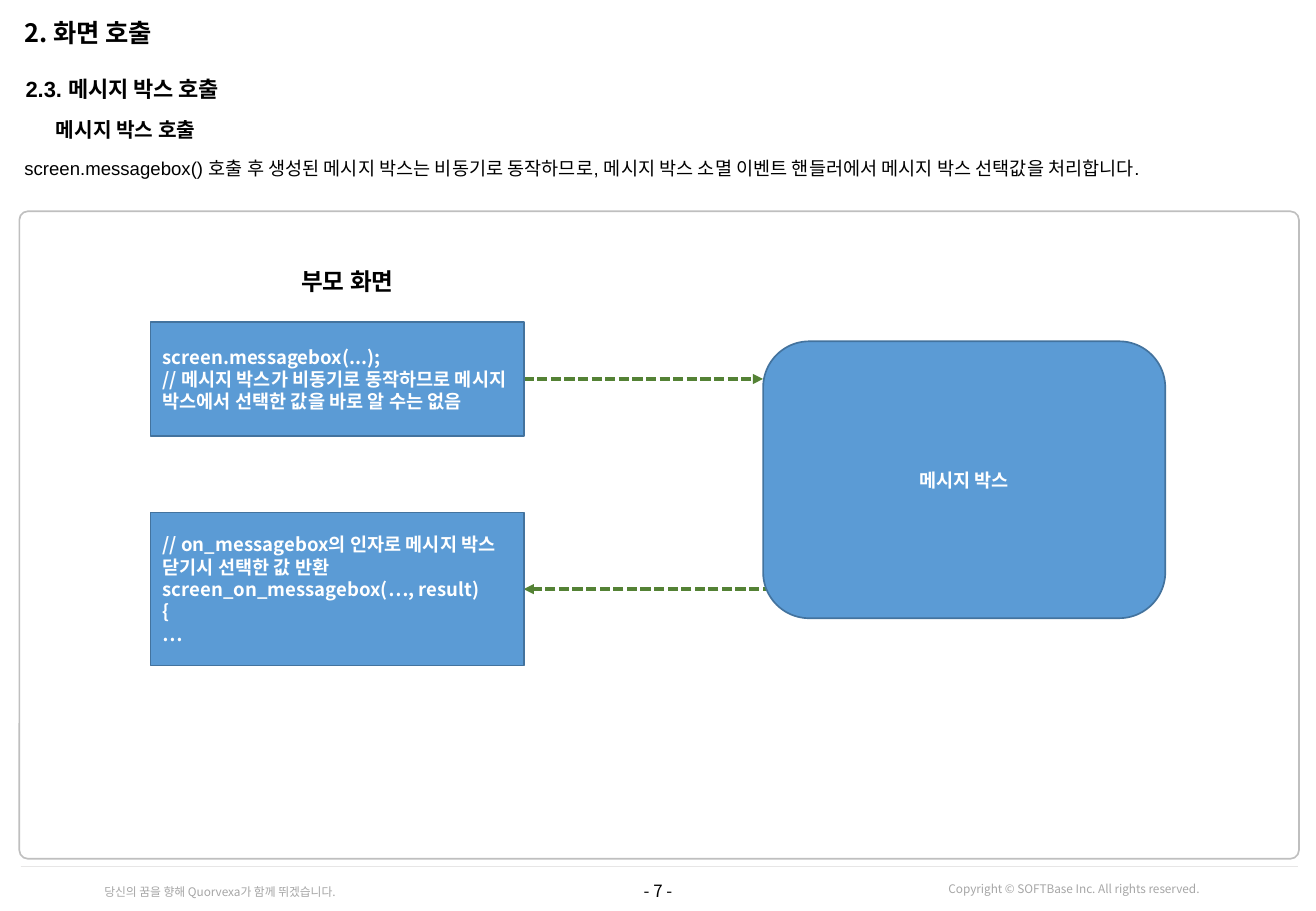
import dataclasses
import typing

import pptx
import pptx.dml.color
import pptx.enum.dml
import pptx.enum.shapes
import pptx.enum.text
import pptx.oxml.ns
import pptx.util
from lxml import etree

PX = 9144  # 100 px to the inch
NOTO = "Noto Sans CJK KR"
HUES = {
    "ink": "000000", "white": "FFFFFF", "foot": "A6A6A6", "rule": "E7E6E6",
    "frame": "BFBFBF", "blue": "5B9BD5", "edge": "43739E", "green": "548235",
}
KIND = pptx.enum.shapes.MSO_SHAPE
ALIGN = pptx.enum.text.PP_ALIGN
TOP = pptx.enum.text.MSO_ANCHOR.TOP
MID = pptx.enum.text.MSO_ANCHOR.MIDDLE
Area = tuple[int, int, int, int]


@dataclasses.dataclass
class Words:
    text: str
    size: int
    hue: str = "ink"
    face: str = NOTO
    bold: bool = False
    align: typing.Any = ALIGN.LEFT
    pitch: typing.Any = 1.0


@dataclasses.dataclass
class Head:
    slot: int
    area: Area
    words: Words


@dataclasses.dataclass
class Note:
    area: Area
    words: Words
    anchor: typing.Any = MID
    wrap: bool = True


@dataclasses.dataclass
class Box:
    kind: typing.Any
    area: Area
    words: Words


@dataclasses.dataclass
class Link:
    start: tuple[int, int]
    end: tuple[int, int]
    hue: str
    width: float
    arrow: bool = False


def put(item: typing.Any, vals: dict[str, typing.Any]) -> None:
    for name, val in vals.items():
        setattr(item, name, val)


def place(shape: typing.Any, area: Area) -> None:
    put(shape, dict(zip(("left", "top", "width", "height"), (n * PX for n in area))))


def color(hue: str) -> pptx.dml.color.RGBColor:
    return pptx.dml.color.RGBColor.from_string(HUES[hue])


def tag(node: typing.Any, name: str, **vals: str) -> None:
    etree.SubElement(node, pptx.oxml.ns.qn(name), vals)


def write(frame: typing.Any, words: Words, pad: tuple[int, int],
          anchor: typing.Any, wrap: bool = True) -> None:
    side, edge = (n * PX for n in pad)
    put(frame, {
        "auto_size": pptx.enum.text.MSO_AUTO_SIZE.NONE, "word_wrap": wrap,
        "vertical_anchor": anchor, "margin_left": side, "margin_right": side,
        "margin_top": edge, "margin_bottom": edge,
    })
    para = frame.paragraphs[0]
    para.text = words.text
    props = para._p.get_or_add_pPr()
    put_xml = {"marL": "0", "indent": "0"}
    for name, val in put_xml.items():
        props.set(name, val)
    tag(props, "a:buNone")
    put(para, {"alignment": words.align, "line_spacing": words.pitch,
               "space_before": pptx.util.Pt(0)})
    for run in para.runs:
        put(run.font, {"size": pptx.util.Pt(words.size), "bold": words.bold,
                       "name": words.face})
        run.font.color.rgb = color(words.hue)
        tag(run._r.get_or_add_rPr(), "a:ea", typeface=NOTO)


def add_head(slide: typing.Any, head: Head) -> None:
    shape = slide.placeholders[head.slot]
    place(shape, head.area)
    write(shape.text_frame, head.words, (4, 4), TOP)


def add_note(slide: typing.Any, note: Note) -> None:
    shape = slide.shapes.add_textbox(*(n * PX for n in note.area))
    write(shape.text_frame, note.words, (10, 5), note.anchor, note.wrap)


def add_shape(slide: typing.Any, kind: typing.Any, area: Area, edge: str) -> typing.Any:
    shape = slide.shapes.add_shape(kind, *(n * PX for n in area))
    shape.shadow.inherit = False
    shape.line.color.rgb = color(edge)
    shape.line.width = pptx.util.Pt(1)
    return shape


def add_box(slide: typing.Any, box: Box) -> None:
    shape = add_shape(slide, box.kind, box.area, "edge")
    shape.fill.solid()
    shape.fill.fore_color.rgb = color("blue")
    write(shape.text_frame, box.words, (10, 5), MID)


def add_link(slide: typing.Any, link: Link) -> None:
    ends = (n * PX for n in link.start + link.end)
    wire = slide.shapes.add_connector(pptx.enum.shapes.MSO_CONNECTOR.STRAIGHT, *ends)
    wire.line.color.rgb = color(link.hue)
    wire.line.width = pptx.util.Pt(link.width)
    if link.arrow:
        wire.line.dash_style = pptx.enum.dml.MSO_LINE.SQUARE_DOT
        tag(wire.line._get_or_add_ln(), "a:tailEnd", type="triangle")
    tag(wire._element.spPr, "a:effectLst")


HEADS = [
    Head(0, (16, 13, 1055, 34), Words("2. 화면 호출", 15, bold=True, pitch=0.9)),
    Head(1, (17, 61, 1054, 28),
         Words("2.3. 메시지 박스 호출", 13, face="Arial", bold=True, pitch=0.9)),
    Head(3, (42, 95, 1029, 28), Words("메시지 박스 호출", 12, bold=True, pitch=0.9)),
    Head(2, (16, 127, 1055, 41), Words(
        "screen.messagebox() 호출 후 생성된 메시지 박스는 비동기로 동작하므로, "
        "메시지 박스 소멸 이벤트 핸들러에서 메시지 박스 선택값을 처리합니다.",
        11, face="Arial", pitch=0.9)),
]
NOTES = [
    Note((0, 718, 1083, 31), Words("- 7 -", 10, align=ALIGN.CENTER)),
    Note((770, 721, 227, 22), Words("Copyright © SOFTBase Inc. All rights reserved.",
                                    7, "foot", align=ALIGN.RIGHT)),
    Note((58, 723, 228, 22), Words("당신의 꿈을 향해 Quorvexa가 함께 뛰겠습니다.",
                                   7, "foot", align=ALIGN.RIGHT)),
    Note((233, 215, 106, 34), Words("부모 화면", 14, face="Arial", bold=True,
                                    align=ALIGN.CENTER), TOP, False),
]
LINKS = [
    Link((17, 713), (1068, 713), "rule", 0.5),
    Link((636, 485), (431, 485), "green", 2, True),
    Link((431, 312), (628, 312), "green", 2, True),
]
CODE = {"size": 11, "hue": "white", "bold": True, "pitch": pptx.util.Pt(13.2)}
BOXES = [
    Box(KIND.RECTANGLE, (124, 265, 307, 94), Words(
        "screen.messagebox(...);\n// 메시지 박스가 비동기로 동작하므로 "
        "메시지 박스에서 선택한 값을 바로 알 수는 없음", **CODE)),
    Box(KIND.RECTANGLE, (124, 422, 307, 126), Words(
        "// on_messagebox의 인자로 메시지 박스 닫기시 선택한 값 반환\n"
        "screen_on_messagebox(…, result)\n{\n…", **CODE)),
    Box(KIND.ROUNDED_RECTANGLE, (628, 281, 331, 228),
        Words("메시지 박스", align=ALIGN.CENTER, **CODE)),
]


def main() -> None:
    deck = pptx.Presentation()
    put(deck, {"slide_width": 1083 * PX, "slide_height": 750 * PX})
    slide = deck.slides.add_slide(deck.slide_layouts[4])

    # Headings and lead text
    for head in HEADS:
        add_head(slide, head)
    spare = slide.placeholders[4]._element
    spare.getparent().remove(spare)

    # Content frame
    frame = add_shape(slide, KIND.ROUNDED_RECTANGLE, (16, 174, 1053, 533), "frame")
    frame.fill.background()
    frame.adjustments[0] = 0.013

    # Call flow and footer
    for link in LINKS:
        add_link(slide, link)
    for box in BOXES:
        add_box(slide, box)
    for note in NOTES:
        add_note(slide, note)

    deck.save("out.pptx")


if __name__ == "__main__":
    main()
